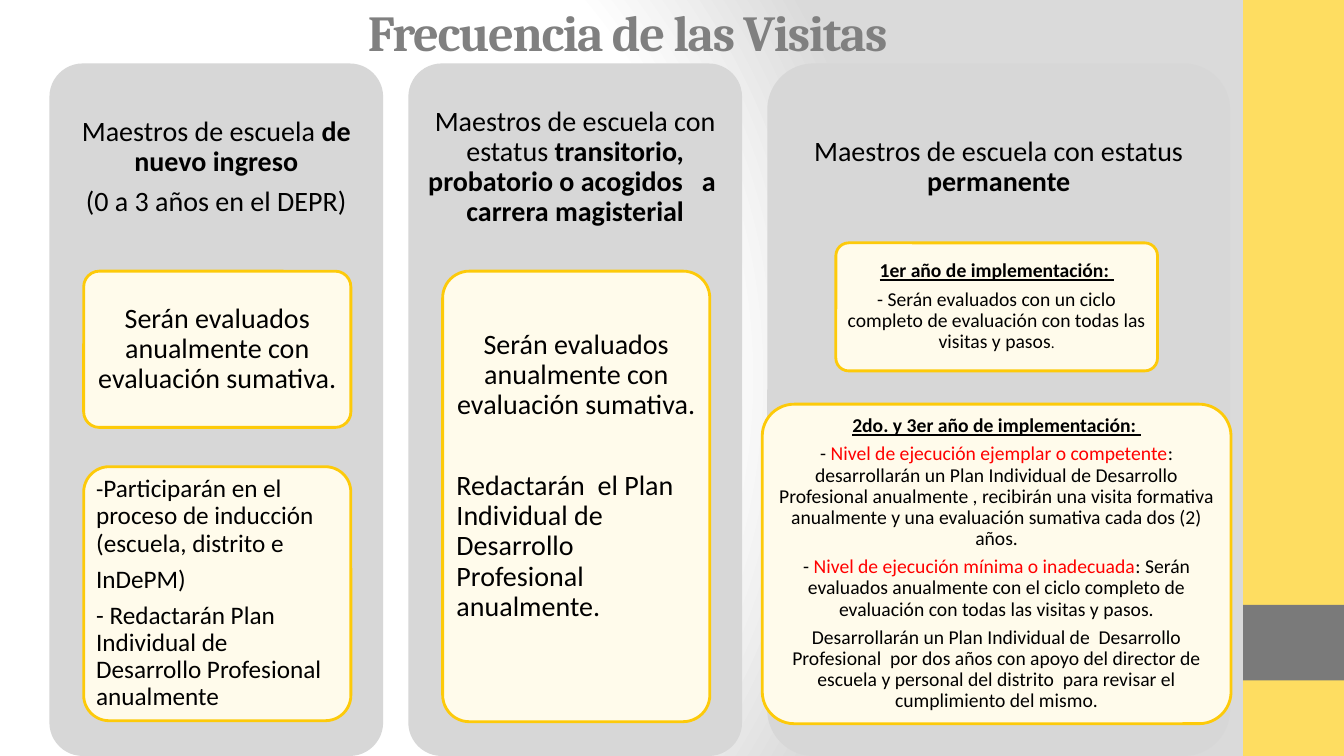
from lxml import etree
from pptx import Presentation
from pptx.dml.color import RGBColor
from pptx.enum.shapes import MSO_SHAPE as Shape
from pptx.enum.text import MSO_ANCHOR as Anchor, PP_ALIGN as Align
from pptx.oxml import parse_xml
from pptx.util import Pt

PX = 9144  # 100 px to the inch
WIDTH, HEIGHT = 1333, 750
TITLE = "Frecuencia de las Visitas"
BANDS = [(0, HEIGHT, "FEDD61"), (600, 75, "7A7A7A")]  # top, height, fill
BAND_LEFT, BAND_WIDTH = 1233, 100
PANEL_LEFT, PANEL_TOP, PANEL_GAP, HEADING_HEIGHT = 49, 63, 25, 206
PANEL_FILL, CARD_FILL, CARD_LINE = "D7D7D7", "FFFBEB", "FDCA0A"

# A paragraph is a list of runs; a run is (text, format overrides).
BOLD = {"bold": True}
LABEL = {"bold": True, "underline": True}
RED = {"color": "FF0000"}
YEARLY = "Serán evaluados anualmente con evaluación sumativa."

COLUMNS = [
    {"width": 331,
     "heading": [[("Maestros de escuela ", {}), ("de nuevo ingreso", BOLD)],
                 [("(0 a 3 años en el DEPR)", {})]],
     "cards": [
         {"offset": 34, "top": 269, "width": 265, "height": 155,
          "insets": (6, 4, 6, 4), "size": 20, "paras": [[(YEARLY, {})]]},
         {"offset": 34, "top": 463, "width": 265, "height": 252,
          "insets": (5, 4, 5, 4), "size": 18, "align": Align.LEFT, "paras": [
              [("-", {"size": 17}),
               ("Participarán en el proceso de inducción (escuela, distrito e", {})],
              [("InDePM)", {})],
              [("- Redactarán Plan Individual de Desarrollo Profesional anualmente", {})]]},
     ]},
    {"width": 331,
     "heading": [[("Maestros de escuela con estatus ", {}),
                  ("transitorio, probatorio o acogidos   a  carrera magisterial", BOLD)]],
     "cards": [
         {"offset": 34, "top": 269, "width": 265, "height": 447,
          "insets": (6, 4, 6, 44), "size": 20, "left_from": 1, "left_gap": 29, "paras": [
              [(YEARLY, {})],
              [("Redactarán  el Plan Individual de Desarrollo Profesional anualmente.", {})]]},
     ]},
    {"width": 459,
     "heading": [[("Maestros de escuela con estatus ", {}), ("permanente", BOLD)]],
     "cards": [
         {"offset": 68, "top": 241, "width": 319, "height": 127,
          "insets": (4, 3, 4, 3), "size": 14, "paras": [
              [("1er año de implementación: ", LABEL)],
              [("- Serán evaluados con un ciclo completo de evaluación con todas las "
                "visitas y pasos", {}), (".", {"size": 11})]]},
         {"offset": -5, "top": 401, "width": 465, "height": 317,
          "insets": (4, 3, 4, 3), "size": 14, "paras": [
              [("2do. y 3er año de implementación: ", LABEL)],
              [("- ", {}), ("Nivel de ejecución ejemplar o competente", RED),
               (": desarrollarán un Plan Individual de Desarrollo Profesional anualmente , "
                "recibirán una visita formativa anualmente y una evaluación sumativa "
                "cada dos (2) años.", {})],
              [("- ", {}), ("Nivel de ejecución mínima o inadecuada", RED),
               (": Serán evaluados anualmente con el ciclo completo de evaluación con "
                "todas las visitas y pasos.", {})],
              [("Desarrollarán un Plan Individual de  Desarrollo Profesional  por dos años "
                "con apoyo del director de escuela y personal del distrito  para revisar "
                "el cumplimiento del mismo.", {})]]},
     ]},
]


def rgb(value):
    return RGBColor.from_string(value)


def emu(*lengths):
    return [length * PX for length in lengths]


def add_box(page, kind, place, fill, line=None):
    box = page.shapes.add_shape(kind, *emu(*place))
    box.shadow.inherit = False
    box.fill.solid()
    box.fill.fore_color.rgb = rgb(fill)
    if line:
        box.line.color.rgb = rgb(line)
        box.line.width = Pt(2)
    else:
        box.line.fill.background()
    if kind == Shape.ROUNDED_RECTANGLE:
        box.adjustments[0] = 0.1
    return box


def add_span(para, text, size=20, font="Calibri", color="000000", bold=False, underline=False):
    span = para.add_run()
    span.text = text
    span.font.size = Pt(size)
    span.font.name = font
    span.font.color.rgb = rgb(color)
    span.font.bold = bold
    span.font.underline = underline
    return span


def write(box, paras, size=20, insets=(8, 8, 8, 8), align=Align.CENTER,
          left_from=None, left_gap=0):
    """Fill a box with paragraphs; from left_from on they are left-aligned after a gap."""
    frame = box.text_frame
    frame.word_wrap = True
    frame.vertical_anchor = Anchor.MIDDLE
    (frame.margin_left, frame.margin_top,
     frame.margin_right, frame.margin_bottom) = emu(*insets)
    for index, runs in enumerate(paras):
        para = frame.add_paragraph() if index else frame.paragraphs[0]
        para.alignment = align
        para.line_spacing = 0.9
        para.space_after = Pt(size * 0.35)
        if left_from is not None and index >= left_from:
            para.alignment = Align.LEFT
            if index == left_from:
                para.space_before = Pt(left_gap)
        for text, style in runs:
            add_span(para, text, **{"size": size, **style})


def paint_background(page):
    """Radial gradient, white fading to grey on the right."""
    fill = page.background.fill
    fill.gradient()
    namespace = "http://schemas.openxmlformats.org/drawingml/2006/main"
    stops = "".join(f'<a:gs pos="{at * 1000}"><a:srgbClr val="{color}"/></a:gs>'
                    for at, color in [(0, "FFFFFF"), (75, "FFFFFF"), (100, "DADADA")])
    gradient = parse_xml(
        f'<a:gradFill xmlns:a="{namespace}" rotWithShape="1"><a:gsLst>{stops}</a:gsLst>'
        '<a:path path="circle"><a:fillToRect l="20000" t="50000" r="100000" b="50000"/>'
        '</a:path></a:gradFill>')
    current = next(page.element.iter(etree.QName(namespace, "gradFill").text))
    current.getparent().replace(current, gradient)


def add_title(page):
    box = page.shapes.add_textbox(*emu(355, 0, 940, 63))
    frame = box.text_frame
    frame.word_wrap = True
    frame.vertical_anchor = Anchor.MIDDLE
    span = add_span(frame.paragraphs[0], TITLE, size=36, font="Cambria",
                    color="808080", bold=True)
    span.font._element.set("spc", "-100")


def add_column(page, left, column):
    width = column["width"]
    add_box(page, Shape.ROUNDED_RECTANGLE,
            (left, PANEL_TOP, width, HEIGHT - PANEL_TOP), PANEL_FILL)
    heading = page.shapes.add_textbox(*emu(left, PANEL_TOP, width, HEADING_HEIGHT))
    write(heading, column["heading"])
    for card in column["cards"]:
        text = dict(card)
        offset, top, card_width, height = [
            text.pop(key) for key in ("offset", "top", "width", "height")]
        box = add_box(page, Shape.ROUNDED_RECTANGLE,
                      (left + offset, top, card_width, height), CARD_FILL, CARD_LINE)
        write(box, **text)


def main():
    deck = Presentation()
    deck.slide_width, deck.slide_height = emu(WIDTH, HEIGHT)
    page = deck.slides.add_slide(deck.slide_layouts[6])
    paint_background(page)
    for top, height, fill in BANDS:
        add_box(page, Shape.RECTANGLE, (BAND_LEFT, top, BAND_WIDTH, height), fill)
    add_title(page)
    left = PANEL_LEFT
    for column in COLUMNS:
        add_column(page, left, column)
        left += column["width"] + PANEL_GAP
    deck.save("out.pptx")


if __name__ == "__main__":
    main()
